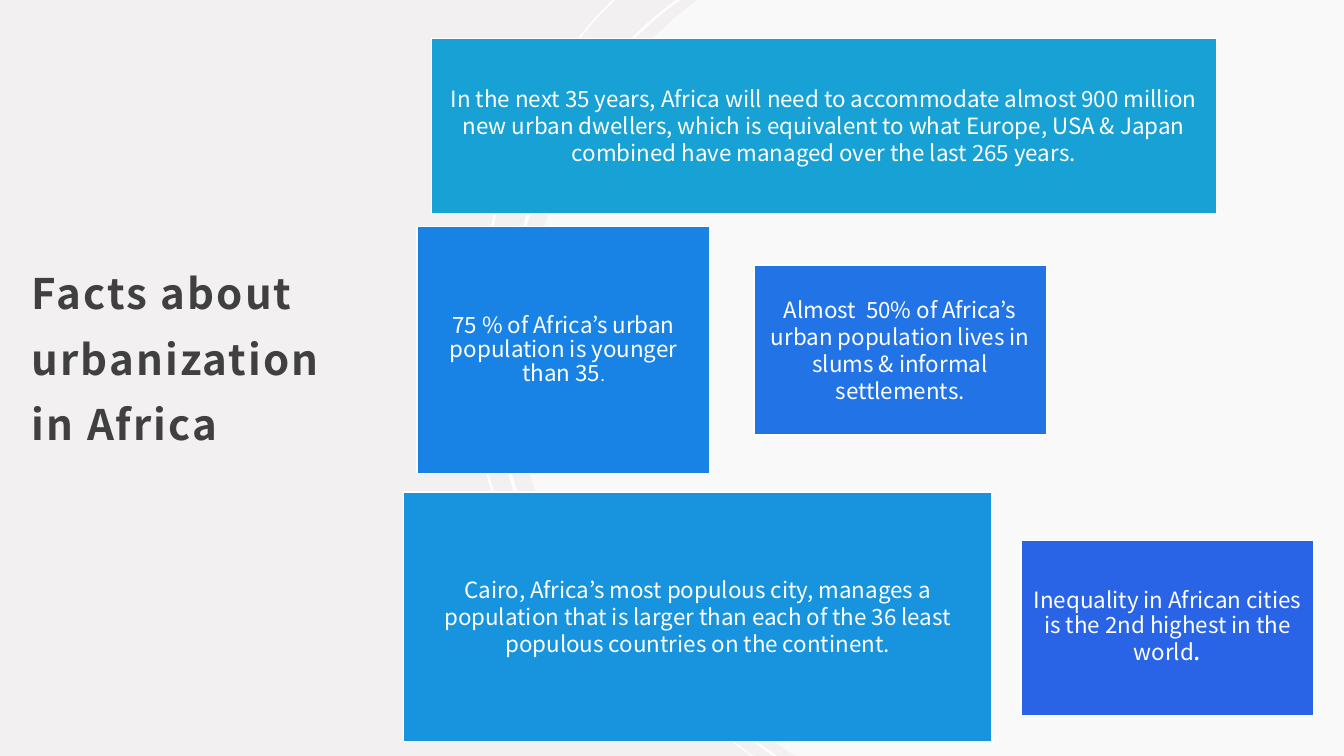
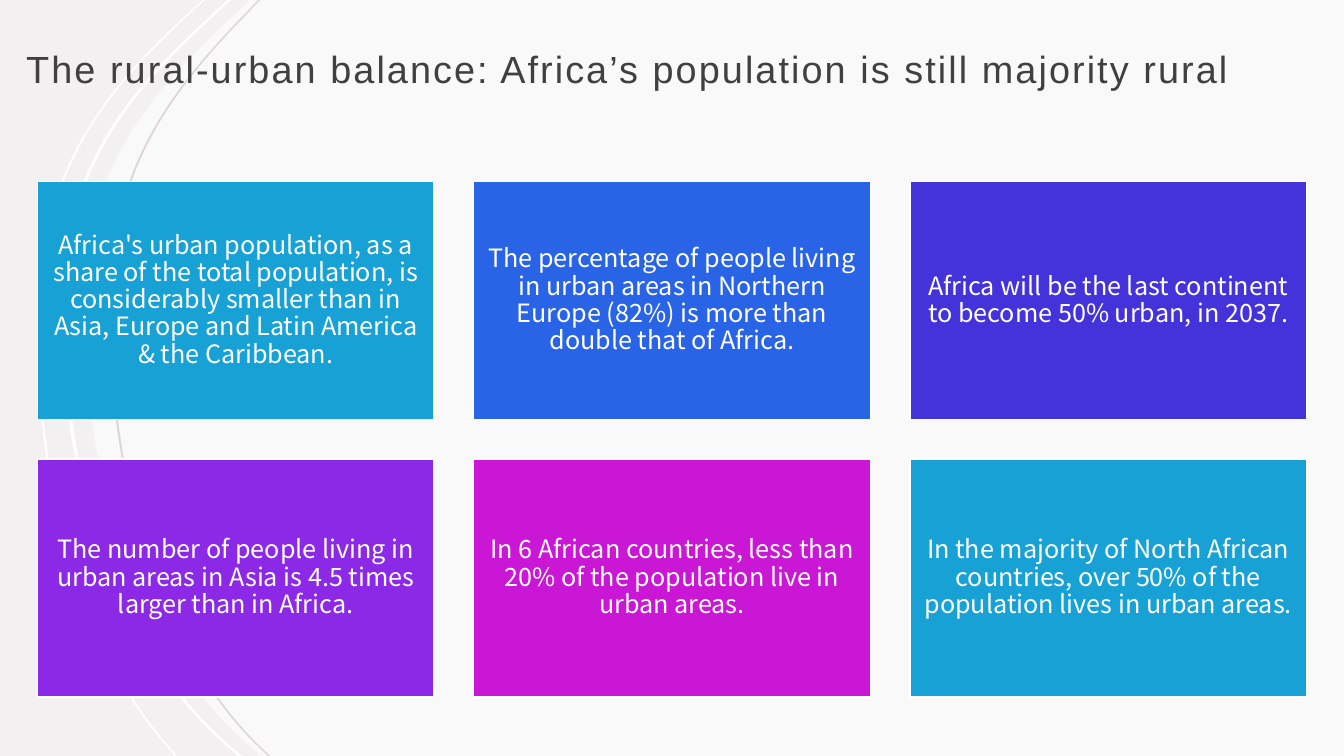
"""Build two slides of facts about urbanization in Africa."""
from pptx import Presentation
from pptx.dml.color import RGBColor
from pptx.enum.shapes import MSO_SHAPE
from pptx.enum.text import MSO_ANCHOR as Anchor, PP_ALIGN as Align
from pptx.oxml.ns import qn
from pptx.oxml.xmlchemy import OxmlElement
from pptx.util import Pt

WIDTH, HEIGHT = 960, 540
BODY_FONT = "Noto Sans CJK JP"
TITLE_FONT = "Arial"

BACKGROUND = RGBColor(0xF3, 0xF0, 0xF1)
WHITE = RGBColor(0xFF, 0xFF, 0xFF)
TITLE_GREY = RGBColor(0x40, 0x40, 0x40)
RIBBON_GREY = RGBColor(0xDE, 0xD5, 0xD8)
CYAN = RGBColor(0x17, 0xA1, 0xD5)
SKY = RGBColor(0x18, 0x93, 0xDD)
AZURE = RGBColor(0x19, 0x83, 0xE5)
COBALT = RGBColor(0x21, 0x73, 0xE6)
BLUE = RGBColor(0x29, 0x64, 0xE7)
INDIGO = RGBColor(0x44, 0x32, 0xDA)
VIOLET = RGBColor(0x8C, 0x29, 0xE7)
MAGENTA = RGBColor(0xC9, 0x17, 0xD5)

FACTS_PANEL_EDGE = [
    (499, 0), (497.5, 0.7), (417, 59), (371.5, 165), (371.5, 285),
    (371.5, 391.7), (444.2, 441.4), (519, 502.5),
    (532.8, 513.4), (545.8, 524.2), (559.4, 534.2), (568, 540)]
FACTS_RIBBON_EDGE = [
    (437.5, 0), (435.6, 2), (368.6, 67.7), (334.8, 172.8), (339.8, 289.4),
    (344.9, 399.6), (419, 448.6), (494.6, 508.3),
    (508.3, 519), (522, 529.2), (535.7, 539.3), (537, 540)]
BALANCE_PANEL_EDGE = [
    (178.6, 0), (152, 25), (100, 75), (59.8, 129), (59.8, 219),
    (59.8, 354), (104.4, 473), (185, 538.6), (186.5, 540)]
BALANCE_RIBBON_EDGE = [
    (144.7, 0), (126, 17.3), (73.4, 67), (31, 121), (27.2, 213.8),
    (22.5, 345.6), (56.2, 464.4), (123.2, 537.8), (124.6, 540)]
BALANCE_GREY_EDGE = [
    (184.3, 0), (160.6, 25), (114.5, 75), (77.8, 129), (77.8, 219),
    (77.8, 354), (118, 473), (190, 538.6), (191.5, 540)]

FACTS = [
    ((308, 27.4, 561, 125), CYAN, 1, [
        ("In the next 35 years, Africa will need to accommodate almost 900 million "
         "new urban dwellers, which is equivalent to what Europe, USA & Japan "
         "combined have managed over the last 265 years.", 16)]),
    ((288.2, 351.5, 420.5, 178), SKY, 1, [
        ("Cairo, Africa’s most populous city, manages a population that is larger "
         "than each of the 36 least populous countries on the continent.", 16)]),
    ((298, 161.8, 209.2, 176.4), AZURE, 0.9, [
        ("75 % of Africa’s urban population is younger than 35", 16), (".", 12)]),
    ((538.5, 189.4, 209, 121.3), COBALT, 1, [
        ("Almost  50% of Africa’s urban population lives in slums & informal "
         "settlements.", 16)]),
    ((729.4, 386.1, 209.2, 125.1), BLUE, 0.9, [
        ("Inequality in African cities is the 2nd highest in the world", 16),
        (".", 19)]),
]
BALANCE = [
    (CYAN, "Africa's urban population, as a share of the total population, is "
           "considerably smaller than in Asia, Europe and Latin America & the "
           "Caribbean."),
    (BLUE, "The percentage of people living in urban areas in Northern Europe "
           "(82%) is more than double that of Africa."),
    (INDIGO, "Africa will be the last continent to become 50% urban, in 2037."),
    (VIOLET, "The number of people living in urban areas in Asia is 4.5 times "
             "larger than in Africa."),
    (MAGENTA, "In 6 African countries, less than 20% of the population live in "
              "urban areas."),
    (CYAN, "In the majority of North African countries, over 50% of the population "
           "lives in urban areas."),
]


def split_edge(edge):
    """Split an edge into a line, a chain of cubic curves and a line."""
    curves = [tuple(edge[i:i + 3]) for i in range(2, len(edge) - 1, 3)]
    return [(edge[1],), *curves, (edge[-1],)]


def add_outline(slide, start, segments, color):
    """Add a closed filled outline of lines and cubic curves."""
    builder = slide.shapes.build_freeform(*map(Pt, start))
    builder.add_line_segments(
        [tuple(map(Pt, segment[-1])) for segment in segments], close=True)
    shape = builder.convert_to_shape()
    lines = list(shape._element.iter(qn("a:lnTo")))
    for line, segment in zip(lines, segments):
        if len(segment) == 3:
            curve = OxmlElement("a:cubicBezTo")
            for x, y in segment:
                point = OxmlElement("a:pt")
                point.set("x", str(Pt(x) - shape.left))
                point.set("y", str(Pt(y) - shape.top))
                curve.append(point)
            line.getparent().replace(line, curve)
    shape.shadow.inherit = False
    shape.fill.solid()
    shape.fill.fore_color.rgb = color
    shape.line.fill.background()
    return shape


def add_panel(slide, edge):
    """Add the translucent white panel that reaches the right side."""
    corners = [((WIDTH, HEIGHT),), ((WIDTH, 0),)]
    panel = add_outline(slide, edge[0], split_edge(edge) + corners, WHITE)
    alpha = OxmlElement("a:alpha")
    alpha.set("val", "60000")
    panel.fill._xPr.find(qn("a:solidFill"))[0].append(alpha)


def add_ribbon(slide, edge, thickness, color=WHITE, offset=0):
    """Add a thin ribbon that follows an edge."""
    left = [(x + offset, y) for x, y in edge]
    right = [(x + thickness, y) for x, y in left[::-1]]
    segments = split_edge(left) + [(right[0],)] + split_edge(right)
    add_outline(slide, left[0], segments, color)


def set_frame(shape, anchor, margins):
    """Set wrapping, anchor and margins, and return the text frame."""
    frame = shape.text_frame
    frame.word_wrap = True
    frame.vertical_anchor = anchor
    (frame.margin_left, frame.margin_top,
     frame.margin_right, frame.margin_bottom) = map(Pt, margins)
    return frame


def add_span(para, text, size, font, color):
    """Add one run of text."""
    span = para.add_run()
    span.text = text
    span.font.size = Pt(size)
    span.font.name = font
    span.font.color.rgb = color
    return span


def add_title(slide, place, text, size, font, spacing, anchor, bold=False):
    """Add a letter-spaced title."""
    box = slide.shapes.add_textbox(*map(Pt, place))
    para = set_frame(box, anchor, (8.64, 8.64, 8.64, 7.2)).paragraphs[0]
    para.line_spacing = spacing
    span = add_span(para, text, size, font, TITLE_GREY)
    span.font.bold = bold
    span._r.get_or_add_rPr().set("spc", "150")


def add_tile(slide, place, color, spacing, spans):
    """Add a coloured tile with centred white text."""
    tile = slide.shapes.add_shape(MSO_SHAPE.RECTANGLE, *map(Pt, place))
    tile.shadow.inherit = False
    tile.fill.solid()
    tile.fill.fore_color.rgb = color
    tile.line.color.rgb = WHITE
    tile.line.width = Pt(1)
    para = set_frame(tile, Anchor.MIDDLE, (5, 5, 5, 5)).paragraphs[0]
    para.alignment = Align.CENTER
    para.line_spacing = spacing
    for text, size in spans:
        add_span(para, text, size, BODY_FONT, WHITE)


def build_facts(slide):
    """Build the slide with scattered fact tiles."""
    add_panel(slide, FACTS_PANEL_EDGE)
    add_ribbon(slide, FACTS_RIBBON_EDGE, 1.5)
    add_ribbon(slide, FACTS_PANEL_EDGE, 2.5, offset=-15.3)
    add_title(slide, (14, 81.4, 237.6, 337), "Facts about urbanization in Africa",
              30, BODY_FONT, 1.3, Anchor.MIDDLE, bold=True)
    for fact in FACTS:
        add_tile(slide, *fact)


def build_balance(slide):
    """Build the slide with a grid of three by two tiles."""
    add_panel(slide, BALANCE_PANEL_EDGE)
    add_ribbon(slide, BALANCE_RIBBON_EDGE, 1.5)
    add_ribbon(slide, BALANCE_PANEL_EDGE, 2.5, offset=-16.3)
    add_ribbon(slide, BALANCE_GREY_EDGE, 1.5, RIBBON_GREY)
    add_title(slide, (10, 34.6, 937.4, 37.4),
              "The rural-urban balance: Africa’s population is still majority rural",
              27, TITLE_FONT, 1.2, Anchor.BOTTOM)
    for index, (color, text) in enumerate(BALANCE):
        row, column = divmod(index, 3)
        place = (26.8 + 311.6 * column, 129.7 + 198.2 * row, 283.2, 169.9)
        add_tile(slide, place, color, 0.9, [(text, 18)])


def main():
    """Build and save the deck."""
    deck = Presentation()
    deck.slide_width, deck.slide_height = Pt(WIDTH), Pt(HEIGHT)
    fill = deck.slide_master.background.fill
    fill.solid()
    fill.fore_color.rgb = BACKGROUND
    for build in (build_facts, build_balance):
        build(deck.slides.add_slide(deck.slide_layouts[6]))
    deck.save("out.pptx")


if __name__ == "__main__":
    main()
